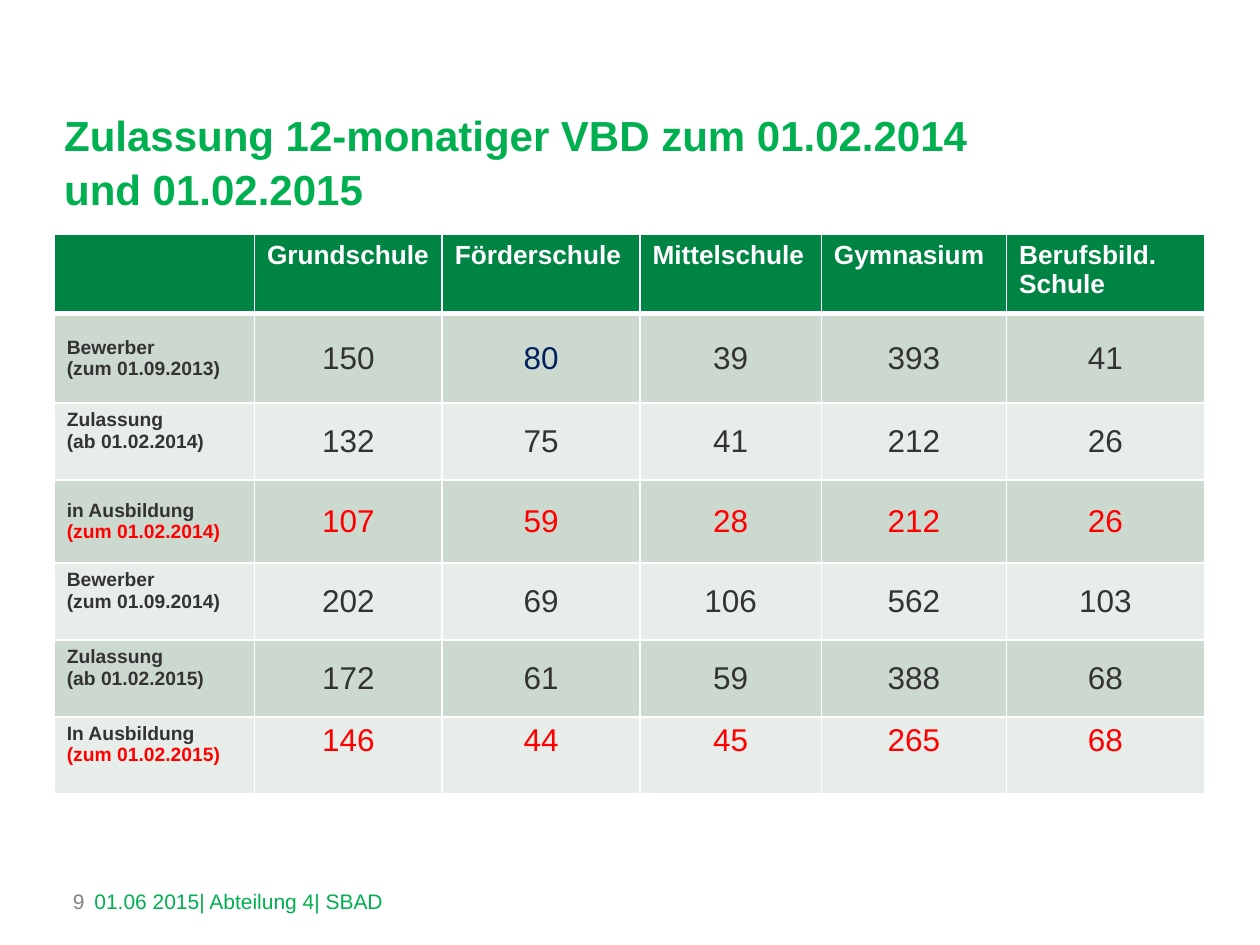
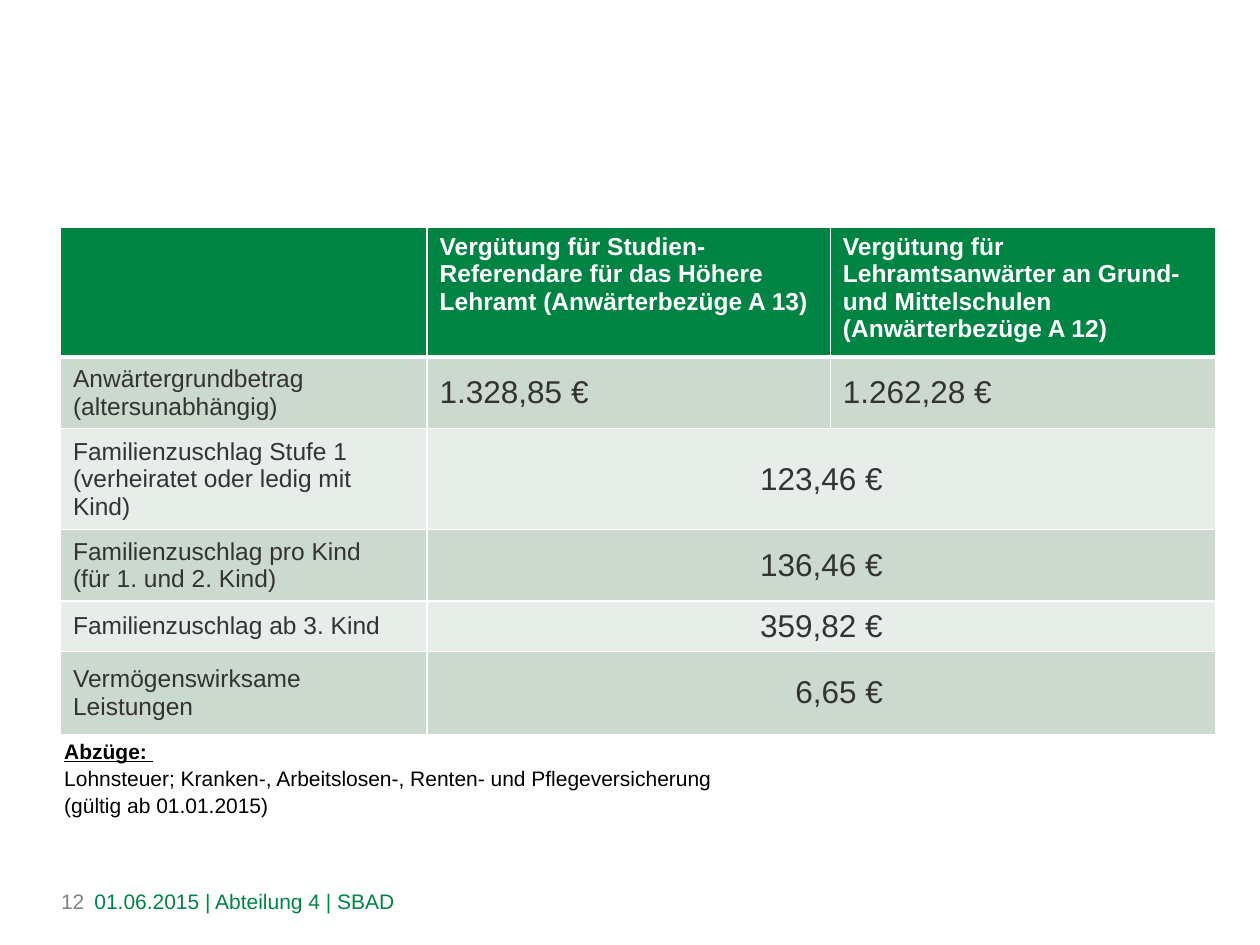
from lxml import etree
from pptx import Presentation
from pptx import util as u
from pptx.dml.color import RGBColor
from pptx.enum import text
from pptx.oxml.ns import qn

DARK_GREEN = RGBColor(0x00, 0x84, 0x44)
BRIGHT_GREEN = RGBColor(0x00, 0xB0, 0x50)
BAND = RGBColor(0xCC, 0xD9, 0xCF)
PALE_BAND = RGBColor(0xE7, 0xED, 0xE9)
WHITE = RGBColor(0xFF, 0xFF, 0xFF)
BLACK = RGBColor(0x00, 0x00, 0x00)
BODY = RGBColor(0x33, 0x33, 0x33)
GREY = RGBColor(0x82, 0x84, 0x80)
RED = RGBColor(0xFF, 0x00, 0x00)
NAVY = RGBColor(0x00, 0x20, 0x60)

TOP, MIDDLE, BOTTOM = (text.MSO_ANCHOR.TOP, text.MSO_ANCHOR.MIDDLE,
                       text.MSO_ANCHOR.BOTTOM)
LEFT, CENTER, RIGHT = (text.PP_ALIGN.LEFT, text.PP_ALIGN.CENTER,
                       text.PP_ALIGN.RIGHT)


class Deck:
    """Holds the shared style and the current slide, and draws its elements."""

    def __init__(self):
        self.prs = Presentation()
        self.prs.slide_width, self.prs.slide_height = u.Inches(10), u.Inches(7.5)
        self.slide = None

    def new_slide(self, number, footer, footer_color):
        self.slide = self.prs.slides.add_slide(self.prs.slide_layouts[6])
        self.label((0.75, 6.81, 4.96, 0.69), [footer], color=footer_color)
        self.label((0, 6.81, 0.67, 0.69), [str(number)], color=GREY, align=RIGHT)

    def fill_text(self, frame, lines, align=LEFT, spacing=None, **style):
        """Set one paragraph per line; a line is text or (text, changes)."""
        for index, line in enumerate(lines):
            words, changes = (line, {}) if isinstance(line, str) else line
            paragraph = frame.paragraphs[0] if index == 0 else frame.add_paragraph()
            paragraph.alignment, paragraph.line_spacing = align, spacing
            run = paragraph.add_run()
            run.text = words
            look = {"name": "Arial", "bold": False, **style, **changes}
            run.font.color.rgb = look.pop("color")
            look["size"] = u.Pt(look["size"])
            for key, value in look.items():
                setattr(run.font, key, value)

    def label(self, box, lines, anchor=MIDDLE, size=12, **style):
        frame = self.slide.shapes.add_textbox(*map(u.Inches, box)).text_frame
        layout = {"word_wrap": True, "vertical_anchor": anchor, "margin_left": 0,
                  "margin_right": 0, "margin_top": 0, "margin_bottom": 0}
        for key, value in layout.items():
            setattr(frame, key, value)
        self.fill_text(frame, lines, size=size, **style)

    def cell(self, cell, lines, anchor=MIDDLE, **style):
        cell.vertical_anchor = anchor
        self.fill_text(cell.text_frame, lines, **style)

    def borders(self, cell, top, bottom):
        properties = cell._tc.get_or_add_tcPr()
        widths = {"a:lnL": 1, "a:lnR": 1, "a:lnT": top, "a:lnB": bottom}
        for index, (side, points) in enumerate(widths.items()):
            line = etree.Element(qn(side), w=str(u.Pt(points)))
            fill = etree.SubElement(line, qn("a:solidFill"))
            etree.SubElement(fill, qn("a:srgbClr"), val=str(WHITE))
            properties.insert(index, line)

    def table(self, left, top, widths, heights, headings, heading_size):
        grid = self.slide.shapes.add_table(
            len(heights), len(widths), u.Inches(left), u.Inches(top),
            u.Inches(sum(widths)), u.Inches(sum(heights))).table
        for column, width in zip(grid.columns, widths):
            column.width = u.Inches(width)
        for index, (row, height) in enumerate(zip(grid.rows, heights)):
            row.height = u.Inches(height)
            color = DARK_GREEN if index == 0 else BAND if index % 2 else PALE_BAND
            for cell in row.cells:
                cell.fill.solid()
                cell.fill.fore_color.rgb = color
                self.borders(cell, 3 if index == 1 else 1, 3 if index == 0 else 1)
        for column, lines in enumerate(headings, 1):
            heading = grid.cell(0, column)
            heading.margin_right = u.Inches(0.08)
            self.cell(heading, lines, TOP, size=heading_size, bold=True, color=WHITE)
        return grid


def admissions(deck):
    """Admissions by school type for both years."""
    deck.new_slide(9, "01.06 2015| Abteilung 4| SBAD", BRIGHT_GREEN)
    deck.label((0.51, 0.52, 7.24, 1.18),
               ["Zulassung 12-monatiger VBD zum 01.02.2014 und 01.02.2015"],
               anchor=BOTTOM, size=24, bold=True, color=BRIGHT_GREEN, spacing=1.08)
    schools = ["Grundschule", "Förderschule", "Mittelschule", "Gymnasium",
               "Berufsbild. Schule"]
    grid = deck.table(0.43, 1.86, [1.59, 1.49, 1.57, 1.44, 1.47, 1.57],
                      [0.63, 0.71, 0.61, 0.66, 0.61, 0.61, 0.61],
                      [[school] for school in schools], 15)
    stages = [
        ("Bewerber", "(zum 01.09.2013)", BODY, MIDDLE, MIDDLE, (150, 80, 39, 393, 41)),
        ("Zulassung", "(ab 01.02.2014)", BODY, TOP, MIDDLE, (132, 75, 41, 212, 26)),
        ("in Ausbildung", "(zum 01.02.2014)", RED, MIDDLE, MIDDLE,
         (107, 59, 28, 212, 26)),
        ("Bewerber", "(zum 01.09.2014)", BODY, TOP, MIDDLE, (202, 69, 106, 562, 103)),
        ("Zulassung", "(ab 01.02.2015)", BODY, TOP, MIDDLE, (172, 61, 59, 388, 68)),
        ("In Ausbildung", "(zum 01.02.2015)", RED, TOP, TOP, (146, 44, 45, 265, 68)),
    ]
    for row, (stage, date, color, stage_anchor, anchor, counts) in enumerate(stages, 1):
        deck.cell(grid.cell(row, 0), [stage, (date, {"color": color})], stage_anchor,
                  size=11, bold=True, color=BODY)
        for column, count in enumerate(counts, 1):
            shade = NAVY if (row, column) == (1, 2) else color
            deck.cell(grid.cell(row, column), [str(count)], anchor, size=18,
                      color=shade, align=CENTER)


def pay(deck):
    """Monthly pay and supplements of the trainees."""
    deck.new_slide(12, "01.06.2015 | Abteilung 4 | SBAD", DARK_GREEN)
    deck.label((0.51, 5.88, 7.28, 0.61),
               [("Abzüge: ", {"bold": True, "underline": True}),
                "Lohnsteuer; Kranken-, Arbeitslosen-, Renten- und Pflegeversicherung",
                "(gültig ab 01.01.2015)"],
               anchor=BOTTOM, color=BLACK, spacing=1.08)
    grid = deck.table(
        0.48, 1.8, [2.91, 3.2, 3.06], [0.97, 0.54, 0.75, 0.54, 0.38, 0.66],
        [["Vergütung für Studien-",
          "Referendare für das Höhere Lehramt (Anwärterbezüge A 13)"],
         ["Vergütung für Lehramtsanwärter an Grund- und Mittelschulen "
          "(Anwärterbezüge A 12)"]], 14)
    payments = [
        (["Anwärtergrundbetrag", "(altersunabhängig)"], ["1.328,85 €", "1.262,28 €"]),
        (["Familienzuschlag Stufe 1 (verheiratet oder ledig mit Kind)"], ["123,46 €"]),
        (["Familienzuschlag pro Kind", "(für 1. und 2. Kind)"], ["136,46 €"]),
        (["Familienzuschlag ab 3. Kind"], ["359,82 €"]),
        (["Vermögenswirksame Leistungen"], ["6,65 €"]),
    ]
    for row, (payment, amounts) in enumerate(payments, 1):
        deck.cell(grid.cell(row, 0), payment, size=14, color=BODY)
        shared = len(amounts) == 1
        if shared:
            grid.cell(row, 1).merge(grid.cell(row, 2))
        for column, amount in enumerate(amounts, 1):
            deck.cell(grid.cell(row, column), [amount], size=18, color=BODY,
                      align=CENTER if shared else LEFT)
    grid.cell(len(payments), 1).margin_left = u.Inches(0.38)


def main():
    deck = Deck()
    admissions(deck)
    pay(deck)
    deck.prs.save("out.pptx")


if __name__ == "__main__":
    main()
